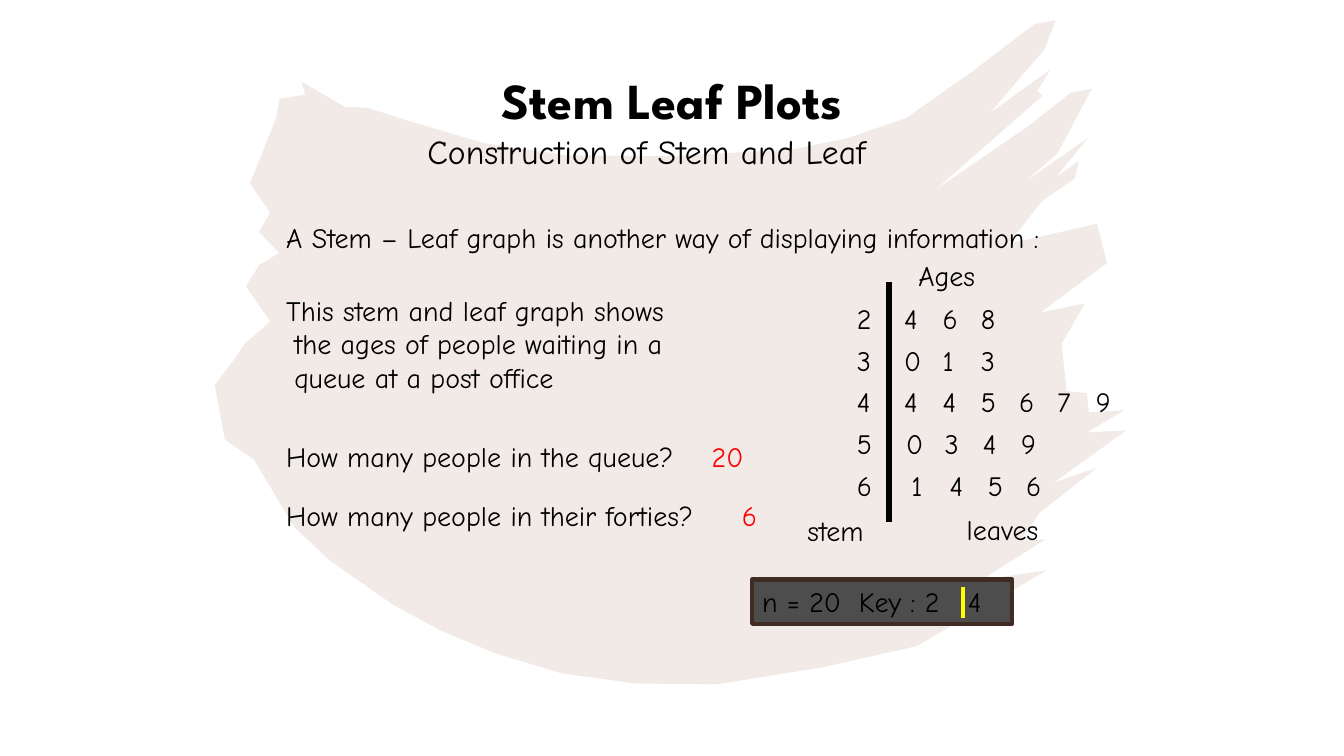
from dataclasses import dataclass

from lxml.etree import SubElement
from pptx import Presentation
from pptx.dml.color import RGBColor
from pptx.enum.shapes import MSO_CONNECTOR, MSO_SHAPE
from pptx.enum.text import MSO_ANCHOR, MSO_AUTO_SIZE, PP_ALIGN
from pptx.oxml.ns import qn
from pptx.slide import Slide
from pptx.text.text import TextFrame
from pptx.util import Inches, Pt

COLOURS = {
    "ink": "000000",
    "answer": "FF0000",
    "brush": "C0998B",
    "key": "4D4D4D",
    "key border": "412C24",
    "key bar": "FFFF00",
}
TITLE_FONT = "League Spartan"
BODY_FONT = "Comic Neue"
LINE_HEIGHT = 0.43
DIGIT_WIDTH = 0.37
STEM_LEFT = 8.4
LEAF_PITCH = 0.38
FIRST_ROW_TOP = 2.94
ROW_PITCH = 0.415

BRUSH_OUTLINE = [
    (402, 119), (480, 142), (562, 154), (665, 155), (788, 148), (841, 137), (899, 117),
    (963, 72), (1026, 24), (1047, 20), (1036, 49), (982, 112), (1042, 69), (1029, 90),
    (1034, 95), (927, 189), (1020, 125), (1062, 92), (1083, 88), (1049, 152), (1017, 180),
    (1079, 137), (1047, 176), (1070, 160), (1066, 177), (1034, 199), (1000, 242), (1088, 222),
    (1098, 261), (1032, 310), (1076, 301), (1053, 341), (1058, 388), (1078, 390), (1080, 409),
    (1115, 407), (1078, 429), (1117, 427), (1045, 479), (1088, 464), (1032, 508), (1012, 536),
    (1037, 535), (974, 575), (1038, 566), (985, 597), (909, 641), (816, 662), (710, 679),
    (630, 678), (557, 668), (491, 648), (436, 625), (390, 600), (327, 556), (292, 523),
    (252, 456), (223, 436), (213, 382), (232, 357), (243, 341), (268, 319), (244, 284),
    (257, 263), (277, 251), (257, 230), (268, 211), (248, 182), (274, 117), (277, 98),
    (303, 94), (299, 81), (342, 106), (365, 107),
]


@dataclass(frozen=True)
class Label:
    lines: tuple[str, ...]
    left: float
    top: float
    width: float
    size: float = 20
    colour: str = "ink"
    hanging: float = 0


@dataclass(frozen=True)
class Bar:
    x: float
    top: float
    bottom: float
    colour: str
    weight: float


@dataclass(frozen=True)
class StemRow:
    stem: str
    leaves: str
    first_leaf: float = 8.87


LABELS = [
    Label(("Construction of Stem and Leaf",), 4.14, 1.25, 4.99, 24),
    Label(("A Stem – Leaf graph is another way of displaying information :",), 2.74, 2.14, 8.29),
    Label(
        ("This stem and leaf graph shows", "the ages of people waiting in a", "queue at a post office"),
        2.74, 2.86, 4.28, hanging=0.08,
    ),
    Label(("stem",), 7.91, 5.05, 0.84),
    Label(("leaves",), 9.49, 5.04, 1),
    Label(("Ages",), 9.01, 2.52, 0.84),
    Label(("How many people in the queue?",), 2.74, 4.31, 4.19),
    Label(("How many people in their forties?",), 2.74, 4.9, 4.58),
    Label(("20",), 6.96, 4.31, 0.54, colour="answer"),
    Label(("6",), 7.26, 4.9, DIGIT_WIDTH, colour="answer"),
]
ROWS = [
    StemRow("2", "468"),
    StemRow("3", "013"),
    StemRow("4", "445679"),
    StemRow("5", "0349", 8.89),
    StemRow("6", "1456", 8.94),
]
PLOT_BAR = Bar(8.82, 2.8, 5.18, "ink", 4.5)
KEY_BAR = Bar(9.55, 5.82, 6.13, "key bar", 3)


def colour_of(name: str) -> RGBColor:
    return RGBColor.from_string(COLOURS[name])


def add_span(para, text: str, size: float, colour: str = "ink", font: str = BODY_FONT, bold: bool = False) -> None:
    span = para.add_run()
    span.text = text
    span.font.size = Pt(size)
    span.font.name = font
    span.font.bold = bold
    span.font.color.rgb = colour_of(colour)


def next_para(frame: TextFrame, index: int):
    return frame.paragraphs[0] if index == 0 else frame.add_paragraph()


def draw_brush(page: Slide) -> None:
    start, *rest = BRUSH_OUTLINE
    builder = page.shapes.build_freeform(*start, scale=Inches(0.01))
    builder.add_line_segments(rest, close=True)
    brush = builder.convert_to_shape()
    brush.shadow.inherit = False
    brush.line.fill.background()
    brush.fill.solid()
    brush.fill.fore_color.rgb = colour_of("brush")
    colour_node = next(brush.element.spPr.iter(qn("a:srgbClr")))
    SubElement(colour_node, qn("a:alpha"), val="20000")


def draw_title(page: Slide) -> None:
    title = page.shapes.title
    title.left, title.top, title.width, title.height = map(Inches, (3.79, 0.58, 5.75, 0.76))
    frame = title.text_frame
    frame.auto_size = MSO_AUTO_SIZE.NONE
    frame.vertical_anchor = MSO_ANCHOR.BOTTOM
    para = frame.paragraphs[0]
    para.alignment = PP_ALIGN.CENTER
    add_span(para, "Stem Leaf Plots", 36, font=TITLE_FONT, bold=True)


def draw_label(page: Slide, label: Label) -> None:
    height = LINE_HEIGHT * label.size / 20 + (len(label.lines) - 1) * 0.335
    box = page.shapes.add_textbox(*map(Inches, (label.left, label.top, label.width, height)))
    frame = box.text_frame
    frame.word_wrap = False
    frame.auto_size = MSO_AUTO_SIZE.SHAPE_TO_FIT_TEXT
    for index, line in enumerate(label.lines):
        para = next_para(frame, index)
        if index and label.hanging:
            para._p.get_or_add_pPr().set("marL", str(Inches(label.hanging)))
        add_span(para, line, label.size, label.colour)


def draw_bar(page: Slide, bar: Bar) -> None:
    ends = map(Inches, (bar.x, bar.top, bar.x, bar.bottom))
    line = page.shapes.add_connector(MSO_CONNECTOR.STRAIGHT, *ends)
    line.line.color.rgb = colour_of(bar.colour)
    line.line.width = Pt(bar.weight)
    SubElement(line.element.spPr, qn("a:effectLst"))


def draw_row(page: Slide, row: StemRow, top: float) -> None:
    draw_label(page, Label((row.stem,), STEM_LEFT, top, DIGIT_WIDTH))
    for index, leaf in enumerate(row.leaves):
        draw_label(page, Label((leaf,), row.first_leaf + index * LEAF_PITCH, top, DIGIT_WIDTH))


def draw_key(page: Slide) -> None:
    key = page.shapes.add_shape(MSO_SHAPE.RECTANGLE, *map(Inches, (7.46, 5.75, 2.58, 0.44)))
    key.shadow.inherit = False
    key.fill.solid()
    key.fill.fore_color.rgb = colour_of("key")
    key.line.color.rgb = colour_of("key border")
    key.line.width = Pt(3)
    key.text_frame.word_wrap = True
    para = key.text_frame.paragraphs[0]
    para.alignment = PP_ALIGN.LEFT
    tabs = SubElement(para._p.get_or_add_pPr(), qn("a:tabLst"))
    for position in (0.96, 2.04):
        SubElement(tabs, qn("a:tab"), pos=str(Inches(position)), algn="l")
    add_span(para, "n = 20\tKey : 2\t4", 20)
    draw_bar(page, KEY_BAR)


def main() -> None:
    deck = Presentation()
    deck.slide_width, deck.slide_height = Inches(13.33), Inches(7.5)
    page = deck.slides.add_slide(deck.slide_layouts.get_by_name("Title Only"))
    draw_brush(page)
    draw_title(page)
    for label in LABELS:
        draw_label(page, label)
    draw_bar(page, PLOT_BAR)
    for index, row in enumerate(ROWS):
        draw_row(page, row, FIRST_ROW_TOP + index * ROW_PITCH)
    draw_key(page)
    deck.save("out.pptx")


if __name__ == "__main__":
    main()
